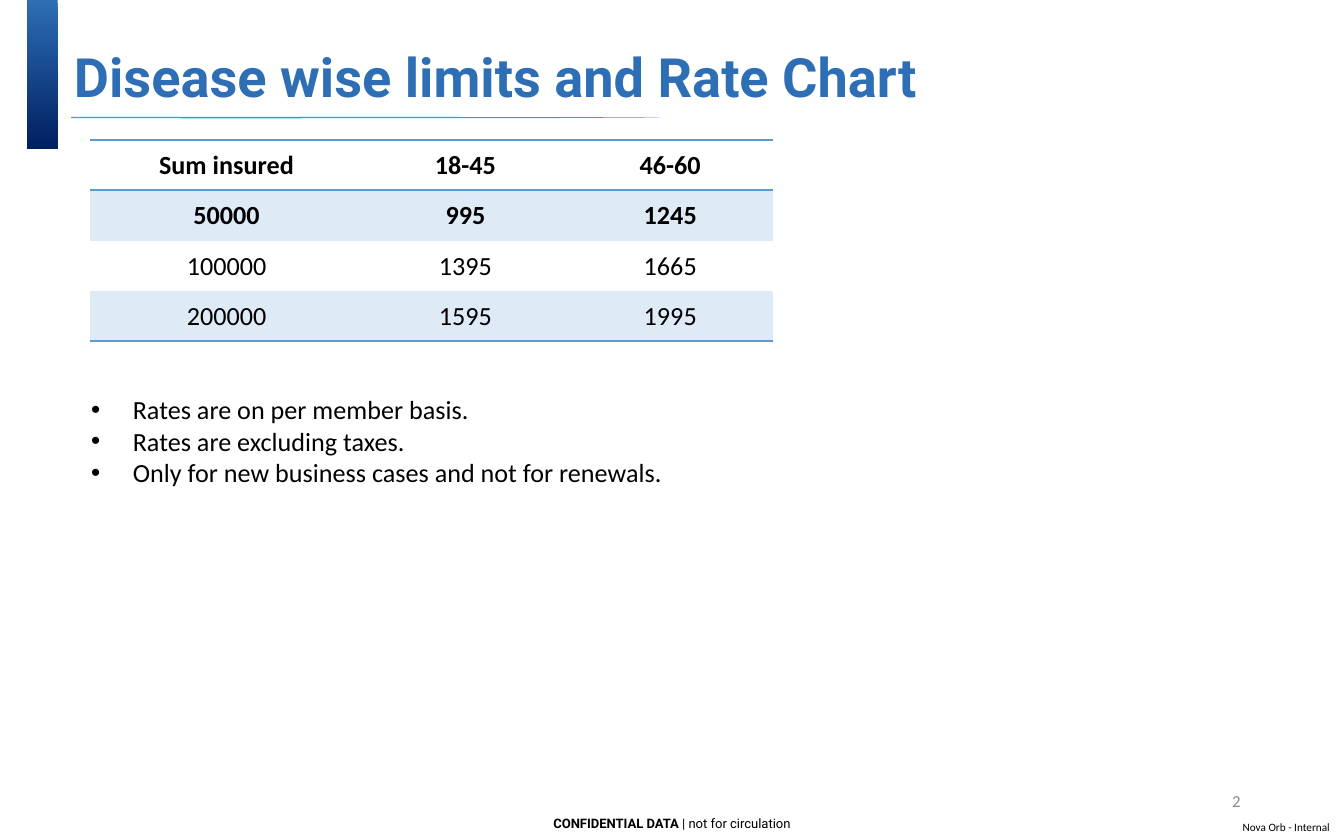
from lxml import etree
from pptx import Presentation
from pptx.dml.color import RGBColor
from pptx.enum.shapes import MSO_SHAPE
from pptx.enum.text import MSO_ANCHOR, PP_ALIGN
from pptx.oxml.ns import qn
from pptx.util import Inches, Pt

LEFT, MID, RIGHT = PP_ALIGN.LEFT, PP_ALIGN.CENTER, PP_ALIGN.RIGHT
TOP, CENTER = MSO_ANCHOR.TOP, MSO_ANCHOR.MIDDLE
RECT, OVAL = MSO_SHAPE.RECTANGLE, MSO_SHAPE.OVAL

WHITE = RGBColor(0xFF, 0xFF, 0xFF)
BLACK = RGBColor(0, 0, 0)
GRAY = RGBColor(0x8C, 0x8C, 0x8C)
BLUE = RGBColor(0x2D, 0x6E, 0xB5)
NAVY = RGBColor(0x00, 0x20, 0x60)
CYAN = RGBColor(0x00, 0xB0, 0xF0)
RULE = RGBColor(0x5B, 0x9B, 0xD5)
BAND = RGBColor(0xDE, 0xEB, 0xF7)

PLAIN = "{2D5ABB26-0587-4C30-8999-92F81FD0307C}"
RATES = [
    ["Sum insured", "18-45", "46-60"],
    ["50000", "995", "1245"],
    ["100000", "1395", "1665"],
    ["200000", "1595", "1995"],
]
NOTES = [
    "Rates are on per member basis.",
    "Rates are excluding taxes.",
    "Only for new business cases and not for renewals.",
]


def add_run(para, text, size=14, font="Calibri", color=BLACK, bold=False):
    """Add one formatted run to a paragraph."""
    run = para.add_run()
    run.text = text
    run.font.size = Pt(size)
    run.font.name = font
    run.font.color.rgb = color
    run.font.bold = bold


def add_frame(slide, box, pad=(0.08, 0.04), anchor=TOP, wrap=True):
    """Add a text box and return its text frame."""
    frame = slide.shapes.add_textbox(*map(Inches, box)).text_frame
    frame.margin_left = frame.margin_right = Inches(pad[0])
    frame.margin_top = frame.margin_bottom = Inches(pad[1])
    frame.vertical_anchor = anchor
    frame.word_wrap = wrap
    return frame


def add_line(slide, box, text, align=LEFT, space=1, pad=(0.08, 0.04),
             anchor=CENTER, wrap=True, **style):
    """Add a box with one line of text and return its paragraph."""
    para = add_frame(slide, box, pad, anchor, wrap).paragraphs[0]
    para.alignment = align
    para.line_spacing = space
    add_run(para, text, **style)
    return para


def add_block(slide, kind, box, *colors):
    """Add an unlined shape with a solid fill or a downward gradient."""
    shape = slide.shapes.add_shape(kind, *map(Inches, box))
    shape.shadow.inherit = False
    shape.line.fill.background()
    if len(colors) == 1:
        shape.fill.solid()
        shape.fill.fore_color.rgb = colors[0]
        return
    shape.fill.gradient()
    shape.fill.gradient_angle = 270
    for stop, color, spot in zip(shape.fill.gradient_stops, colors, (0, 1)):
        stop.color.rgb = color
        stop.position = spot


def add_edge(cell, side):
    """Draw a thin rule on one side of a table cell."""
    line = etree.SubElement(cell._tc.get_or_add_tcPr(), qn("a:ln" + side), w=str(Pt(1)))
    fill = etree.SubElement(line, qn("a:solidFill"))
    etree.SubElement(fill, qn("a:srgbClr"), val=str(RULE))


def draw_head(slide, box):
    """Draw the side bar, the tapered rule and the title."""
    left, top, width, height = box
    add_block(slide, OVAL, (left - 1.8, top + 0.59, 6.25, 0.01), CYAN)
    add_block(slide, RECT, (0, 0, left + 0.06, 1.37), WHITE)
    add_block(slide, RECT, (left - 0.27, 0, 0.23, 1.11), BLUE, NAVY)
    add_line(slide, box, "Disease wise limits and Rate Chart", space=0.9,
             size=29, font="Roboto", color=BLUE, bold=True)


def draw_rates(slide, box):
    """Draw the rate table with banded rows."""
    rows, cols = len(RATES), len(RATES[0])
    table = slide.shapes.add_table(rows, cols, *map(Inches, box)).table
    table._tbl.tblPr.find(qn("a:tableStyleId")).text = PLAIN
    for col, share in zip(table.columns, (0.4, 0.3, 0.3)):
        col.width = Inches(box[2] * share)
    for r, row in enumerate(RATES):
        table.rows[r].height = Inches(box[3] / rows)
        for c, text in enumerate(row):
            cell = table.cell(r, c)
            cell.margin_left = cell.margin_right = cell.margin_top = Inches(0.01)
            cell.margin_bottom = 0
            cell.vertical_anchor = CENTER
            if r == 0:
                add_edge(cell, "T")
            if r in (0, rows - 1):
                add_edge(cell, "B")
            if r % 2:
                cell.fill.solid()
                cell.fill.fore_color.rgb = BAND
            else:
                cell.fill.background()
            para = cell.text_frame.paragraphs[0]
            para.alignment = MID
            add_run(para, text, bold=r < 2)


def draw_notes(slide, box):
    """Draw the bulleted notes."""
    frame = add_frame(slide, box, pad=(0.1, 0.05))
    for i, text in enumerate(NOTES):
        para = frame.add_paragraph() if i else frame.paragraphs[0]
        props = para._p.get_or_add_pPr()
        props.set("marL", str(Inches(0.31)))
        props.set("indent", str(Inches(-0.31)))
        etree.SubElement(props, qn("a:buFont"), typeface="Arial")
        etree.SubElement(props, qn("a:buChar"), char="•")
        add_run(para, text)


def draw_foot(slide, box):
    """Draw the page number, the notice and the class label."""
    left, top, width, height = box
    end = left + width
    add_line(slide, (end - 2.94, top, 2.25, 0.33), "2", align=RIGHT, size=9, color=GRAY)
    para = add_line(slide, (left + width / 2 - 1, top + 0.24, 2, 0.2),
                    "CONFIDENTIAL DATA ", align=MID, anchor=TOP, wrap=False,
                    size=7, font="Roboto", bold=True)
    add_run(para, "| not for circulation", size=7, font="Roboto")
    add_line(slide, (end - 0.86, top + 0.31, 0.86, 0.1), "Nova Orb - Internal",
             align=MID, pad=(0, 0), wrap=False, size=6)


def main():
    """Build and save the slide."""
    deck = Presentation()
    deck.slide_width, deck.slide_height = Inches(10), Inches(6.25)
    slide = deck.slides.add_slide(deck.slide_layouts[6])
    draw_head(slide, (0.47, 0.28, 8.84, 0.63))
    draw_rates(slide, (0.67, 1.04, 5.08, 1.5))
    draw_notes(slide, (0.58, 2.88, 7.92, 0.81))
    draw_foot(slide, (0, 5.79, 10, 0.46))
    deck.save("out.pptx")


if __name__ == "__main__":
    main()
